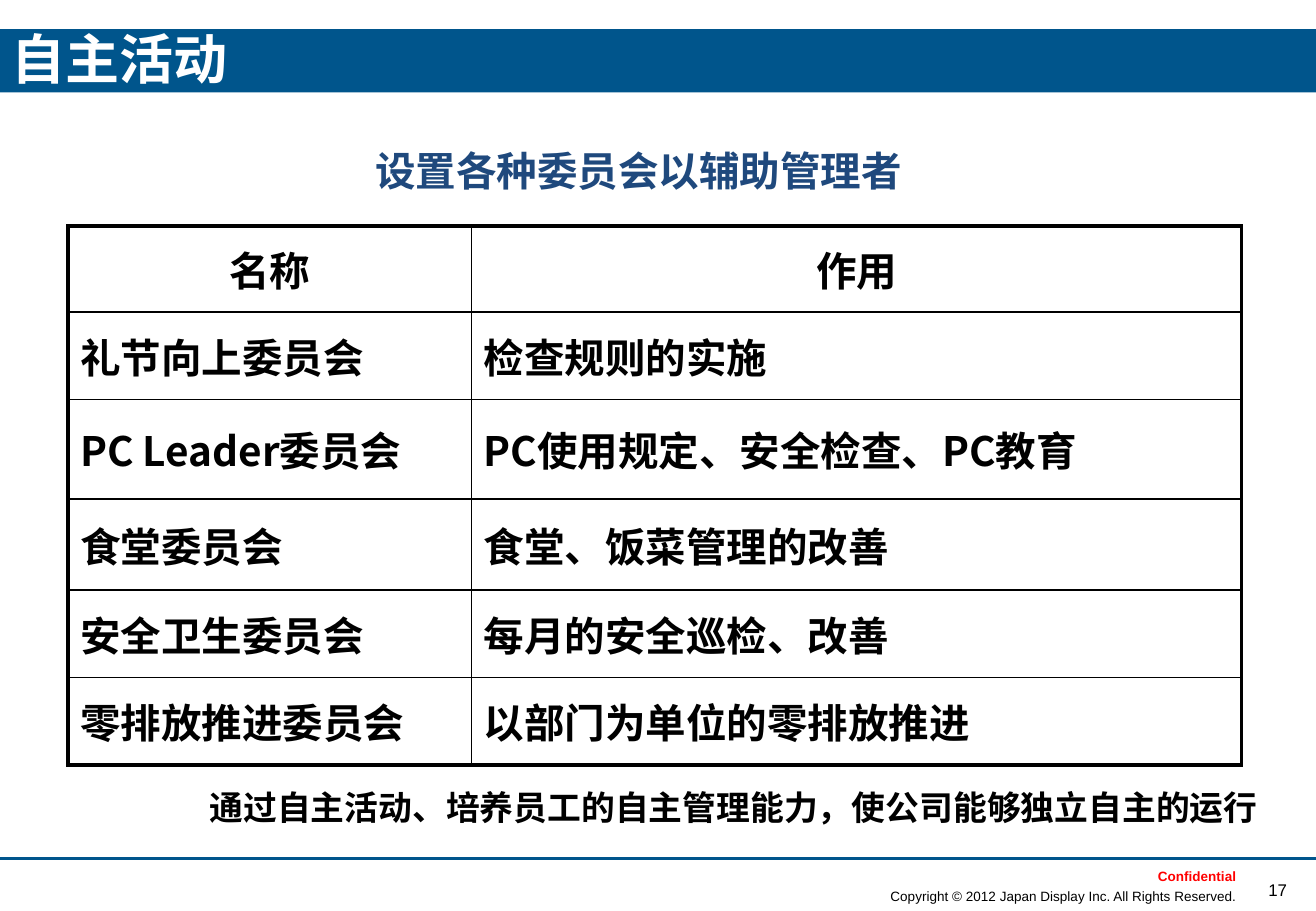
from pptx import Presentation
from pptx.dml.color import RGBColor
from pptx.enum.shapes import MSO_CONNECTOR as CONN, MSO_SHAPE as SHAPE
from pptx.enum.text import MSO_ANCHOR as ANCHOR, PP_ALIGN as ALIGN
from pptx.oxml.ns import qn
from pptx.util import Inches, Pt
from lxml.etree import SubElement

COLORS = {"band": "00558C", "heading": "1F497D", "red": "FF0000",
          "black": "000000", "white": "FFFFFF"}
CJK = "Noto Sans CJK SC"
LATIN = "Arial"
COLS = [3.32, 6.34]
ROW_HEIGHTS = [0.71, 0.72, 0.82, 0.75, 0.72, 0.72]
ROWS = [
    ("名称", "作用"),
    ("礼节向上委员会", "检查规则的实施"),
    ("PC Leader委员会", "PC使用规定、安全检查、PC教育"),
    ("食堂委员会", "食堂、饭菜管理的改善"),
    ("安全卫生委员会", "每月的安全巡检、改善"),
    ("零排放推进委员会", "以部门为单位的零排放推进"),
]
THIN, THICK = 1, 2.25


def rgb(name):
    return RGBColor.from_string(COLORS[name])


def write(tf, text, size, font, color="black", bold=False, align=ALIGN.LEFT):
    tf.text = text
    p = tf.paragraphs[0]
    p.alignment = align
    for r in p.runs:
        r.font.size = Pt(size)
        r.font.bold = bold
        r.font.name = font
        r.font.color.rgb = rgb(color)
        SubElement(r.font._element, qn("a:ea"), typeface=font)


def add_text(s, box, text, size, font, anchor=ANCHOR.TOP, **style):
    tf = s.shapes.add_textbox(*map(Inches, box)).text_frame
    tf.word_wrap = True
    tf.vertical_anchor = anchor
    write(tf, text, size, font, **style)


def add_band(s):
    sp = s.shapes.add_shape(SHAPE.RECTANGLE, 0, Inches(0.24), Inches(10.83), Inches(0.52))
    sp.shadow.inherit = False
    sp.fill.solid()
    sp.fill.fore_color.rgb = rgb("band")
    sp.line.fill.background()


def add_rule(s):
    y = Inches(7.07)
    line = s.shapes.add_connector(CONN.STRAIGHT, 0, y, Inches(10.83), y)
    line.line.color.rgb = rgb("band")
    line.line.width = Pt(2)
    SubElement(line._element.spPr, qn("a:effectLst"))


def set_borders(cell, widths):
    tc_pr = cell._tc.get_or_add_tcPr()
    for side, width in zip("LRTB", widths):
        ln = SubElement(tc_pr, qn(f"a:ln{side}"), w=str(Pt(width)))
        fill = SubElement(ln, qn("a:solidFill"))
        SubElement(fill, qn("a:srgbClr"), val=COLORS["black"])


def add_committee_table(s):
    frame = s.shapes.add_table(len(ROWS), len(COLS), Inches(0.56), Inches(1.86),
                               Inches(sum(COLS)), Inches(sum(ROW_HEIGHTS)))
    table = frame.table
    table.first_row = table.horz_banding = False
    for col, width in zip(table.columns, COLS):
        col.width = Inches(width)
    for i, (texts, height) in enumerate(zip(ROWS, ROW_HEIGHTS)):
        table.rows[i].height = Inches(height)
        for j, text in enumerate(texts):
            cell = table.cell(i, j)
            outer = (j == 0, j == len(COLS) - 1, i == 0, i == len(ROWS) - 1)
            set_borders(cell, [THICK if edge else THIN for edge in outer])
            cell.fill.background()
            cell.vertical_anchor = ANCHOR.MIDDLE
            write(cell.text_frame, text, 24, CJK, bold=True,
                  align=ALIGN.CENTER if i == 0 else ALIGN.LEFT)


def main():
    """Build the committee slide and save it."""
    prs = Presentation()
    prs.slide_width, prs.slide_height = Inches(10.83), Inches(7.5)
    s = prs.slides.add_slide(prs.slide_layouts[6])
    add_band(s)
    add_text(s, (10.24, 7.19, 0.55, 0.34), "17", 10, LATIN, align=ALIGN.CENTER)
    add_text(s, (7.23, 7.26, 3.1, 0.31),
             "Copyright © 2012 Japan Display Inc. All Rights Reserved.", 8, LATIN)
    add_rule(s)
    add_text(s, (9.43, 7.1, 0.89, 0.24), "Confidential", 8, LATIN, color="red", bold=True)
    add_text(s, (0, 0.14, 2.94, 0.67), "自主活动", 32, CJK, ANCHOR.MIDDLE,
             color="white", bold=True)
    add_text(s, (0.3, 6.43, 10.15, 0.43),
             "通过自主活动、培养员工的自主管理能力，使公司能够独立自主的运行", 20, CJK,
             bold=True, align=ALIGN.RIGHT)
    add_text(s, (0.56, 1.15, 9.39, 0.5), "设置各种委员会以辅助管理者", 24, CJK,
             color="heading", bold=True, align=ALIGN.CENTER)
    add_committee_table(s)
    prs.save("out.pptx")


if __name__ == "__main__":
    main()
